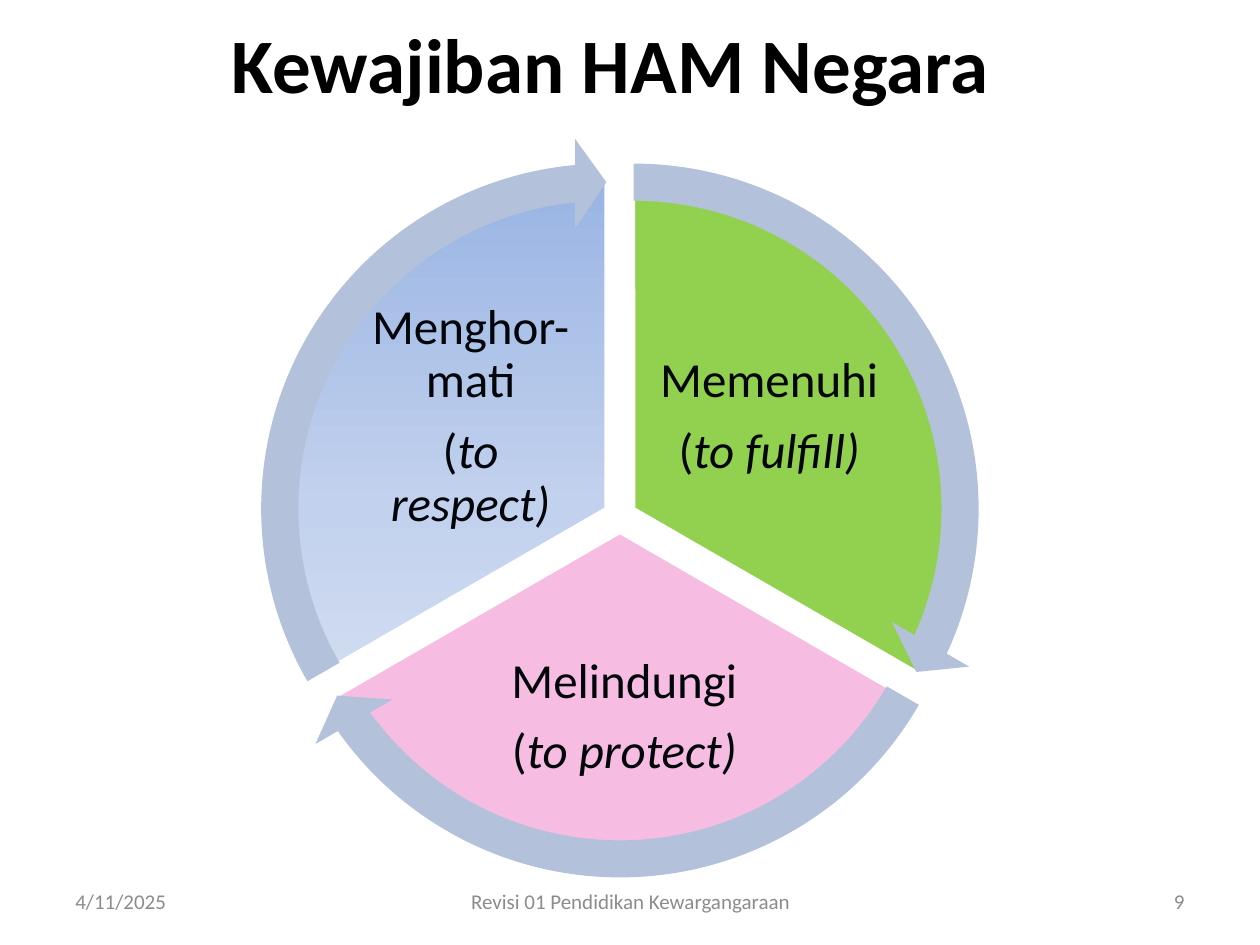
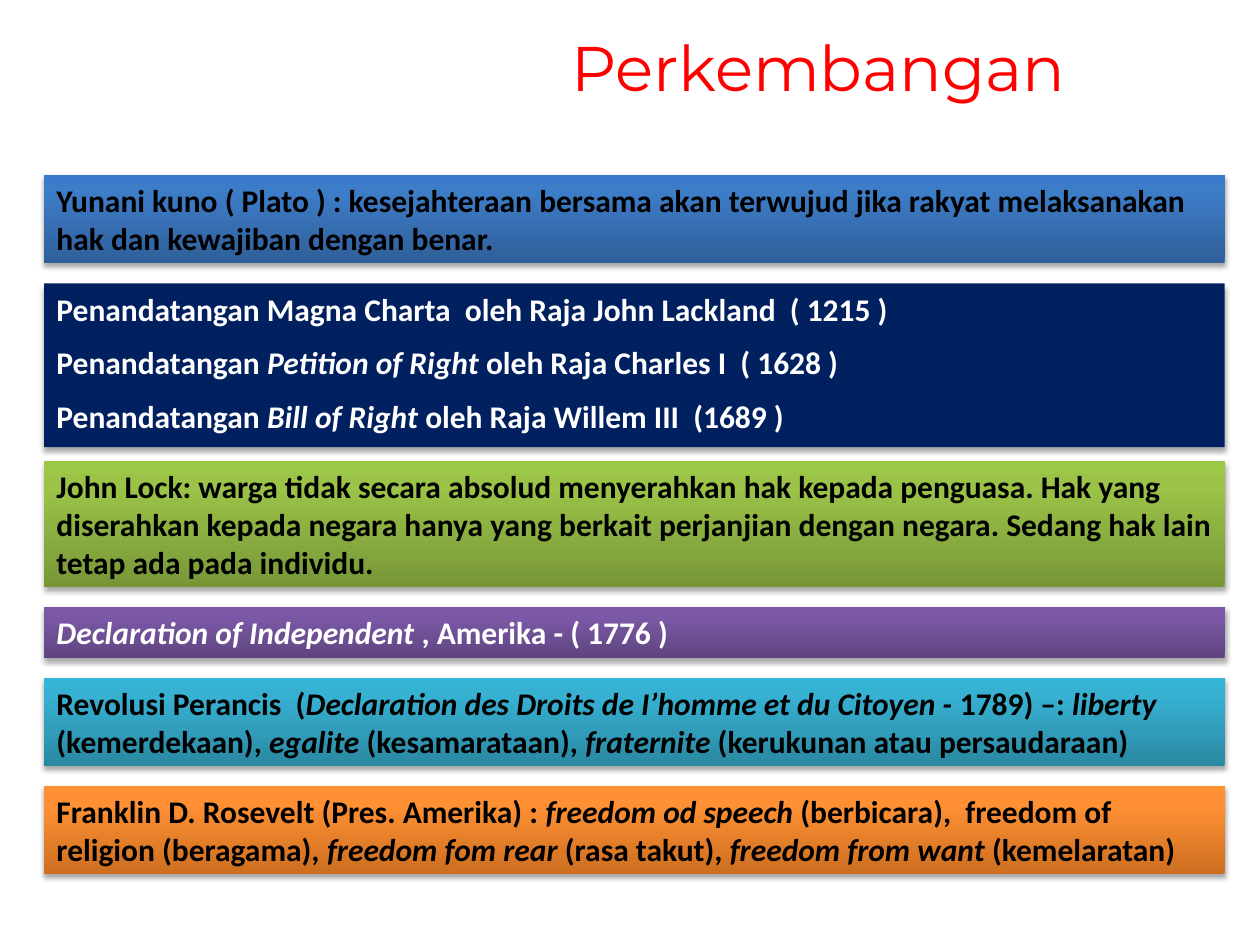
import math

from lxml import etree
from pptx import Presentation
from pptx.dml.color import RGBColor
from pptx.enum.shapes import MSO_SHAPE
from pptx.enum.text import MSO_ANCHOR, MSO_AUTO_SIZE, PP_ALIGN
from pptx.oxml.ns import qn
from pptx.util import Inches, Pt

PIE, ARROW, RECTANGLE = MSO_SHAPE.PIE, MSO_SHAPE.CIRCULAR_ARROW, MSO_SHAPE.RECTANGLE
TOP, MIDDLE = MSO_ANCHOR.TOP, MSO_ANCHOR.MIDDLE
LEFT, CENTER, RIGHT = PP_ALIGN.LEFT, PP_ALIGN.CENTER, PP_ALIGN.RIGHT
NO_FIT, GROW = MSO_AUTO_SIZE.NONE, MSO_AUTO_SIZE.SHAPE_TO_FIT_TEXT

COLORS = {
    "black": "000000", "white": "FFFFFF", "red": "FF0000", "footer": "8C8C8C",
    "label": "02050A", "arrow": "B3C1DB", "green": "92D050", "pink": "F6BCE1",
    "navy": "002060",
}
GRADIENTS = {
    "sky": (90, [(0, "9AB5E4"), (50, "C2D1ED"), (100, "E1E8F5")]),
    "blue": (270, [(0, "2F5F99"), (80, "3D7CC7"), (100, "3A7CCB")]),
    "olive": (270, [(0, "779737"), (80, "9BC348"), (100, "9DC746")]),
    "purple": (270, [(0, "5F4480"), (80, "7B58A6"), (100, "7C57A8")]),
    "teal": (270, [(0, "2A88A2"), (80, "37B1D2"), (100, "34B4D6")]),
    "orange": (270, [(0, "CC6E20"), (80, "FF9034"), (100, "FF9136")]),
}
DEGREE = 0.6

FOOTERS = [
    (0.5, 2.33, LEFT, "4/11/2025"),
    (3.42, 3.17, CENTER, "Revisi 01 Pendidikan Kewargangaraan"),
    (7.17, 2.33, RIGHT, "9"),
]
DUTIES = [
    ("green", (5.17, 2.53, 1.87, 1.56), ["Memenuhi", "(*to fulfill)*"]),
    ("pink", (3.55, 5.01, 2.81, 1.37), ["Melindungi", "(*to protect)*"]),
    ("sky", (2.8, 2.53, 1.87, 1.56), ["Menghor- mati", "(*to respect)*"]),
]
MILESTONES = [
    ("blue", "black", 0.7, 0.16, [
        "Yunani kuno ( Plato ) : kesejahteraan bersama akan terwujud jika rakyat "
        "melaksanakan hak dan kewajiban dengan benar."]),
    ("navy", "white", 1.3, 0.11, [
        "Penandatangan Magna Charta  oleh Raja John Lackland  ( 1215 )",
        "Penandatangan *Petition of Right *oleh Raja Charles I  ( 1628 )",
        "Penandatangan *Bill of Right* oleh Raja Willem III  (1689 )"]),
    ("olive", "black", 1.0, 0.16, [
        "John Lock: warga tidak secara absolud menyerahkan hak kepada penguasa. "
        "Hak yang diserahkan kepada negara hanya yang berkait perjanjian dengan "
        "negara. Sedang hak lain tetap ada pada individu."]),
    ("purple", "white", 0.4, 0.16, [
        "*Declaration of Independent* , Amerika - ( 1776 )"]),
    ("teal", "black", 0.7, 0.16, [
        "Revolusi Perancis  (*Declaration des Droits de I’homme et du Citoyen - *"
        "1789) –: *liberty *(kemerdekaan), *egalite* (kesamarataan), "
        "*fraternite* (kerukunan atau persaudaraan)"]),
    ("orange", "black", 0.7, 0.16, [
        "Franklin D. Rosevelt (Pres. Amerika) : *freedom od speech* (berbicara),  "
        "freedom of religion (beragama), *freedom fom rear* (rasa takut), "
        "*freedom from want* (kemelaratan)"]),
]


class Deck:
    def __init__(self):
        self.presentation = Presentation()
        self.presentation.slide_width = Inches(10)
        self.presentation.slide_height = Inches(7.5)
        self.slide = None

    def add_slide(self, title, box, size, color, font="Calibri", bold=False, wrap=True):
        self.slide = self.presentation.slides.add_slide(self.presentation.slide_layouts[5])
        shape = self.slide.shapes.title
        shape.left, shape.top, shape.width, shape.height = map(Inches, box)
        self.fill_text(shape.text_frame, [title], size, color, CENTER, font, bold, wrap=wrap)

    def fill_text(self, frame, lines, size, color, align=LEFT, font="Calibri", bold=False,
                  anchor=TOP, wrap=True, fit=NO_FIT, before=0, after=0, spacing=1.0):
        frame.word_wrap = wrap
        frame.auto_size = fit
        frame.vertical_anchor = anchor
        for index, line in enumerate(lines):
            paragraph = frame.add_paragraph() if index else frame.paragraphs[0]
            paragraph.alignment = align
            paragraph.line_spacing = spacing
            paragraph.space_before = Pt(before if index else 0)
            paragraph.space_after = Pt(after)
            paragraph.font.name = font
            paragraph.font.size = Pt(size)
            paragraph.font.bold = bold
            paragraph.font.color.rgb = RGBColor.from_string(COLORS[color])
            for position, piece in enumerate(line.split("*")):
                if piece:
                    run = paragraph.add_run()
                    run.text = piece
                    if position % 2:
                        run.font.italic = True

    def text(self, box, lines, size, color, align, inset=None, **style):
        frame = self.slide.shapes.add_textbox(*map(Inches, box)).text_frame
        if inset is not None:
            frame.margin_left = frame.margin_right = Inches(inset)
            frame.margin_top = frame.margin_bottom = Inches(inset)
        self.fill_text(frame, lines, size, color, align, anchor=MIDDLE, **style)

    def footer(self):
        for left, width, align, text in FOOTERS:
            self.text((left, 6.95, width, 0.4), [text], 12, "footer", align)

    def shape(self, kind, box, fill, line=None, adjustments=()):
        shape = self.slide.shapes.add_shape(kind, *map(Inches, box))
        shape.shadow.inherit = False
        for index, value in enumerate(adjustments):
            shape.adjustments[index] = value
        if fill in GRADIENTS:
            self.gradient(shape, *GRADIENTS[fill])
        else:
            shape.fill.solid()
            shape.fill.fore_color.rgb = RGBColor.from_string(COLORS[fill])
        if line:
            shape.line.color.rgb = RGBColor.from_string(COLORS[line])
            shape.line.width = Pt(2)
        else:
            shape.line.fill.background()
        return shape

    def gradient(self, shape, angle, stops):
        shape.fill.gradient()
        gradient = shape._element.spPr.find(qn("a:gradFill"))
        stop_list = gradient.find(qn("a:gsLst"))
        for stop in list(stop_list):
            stop_list.remove(stop)
        for position, color in stops:
            stop = etree.SubElement(stop_list, qn("a:gs"), pos=str(position * 1000))
            etree.SubElement(stop, qn("a:srgbClr"), val=color)
        gradient.find(qn("a:lin")).set("ang", str(angle * 60000))

    def shadow(self, shape):
        effects = shape._element.spPr.find(qn("a:effectLst"))
        outer = etree.SubElement(effects, qn("a:outerShdw"), blurRad=str(Pt(3.1)),
                                 dist=str(Pt(1.8)), dir="5400000", rotWithShape="0")
        color = etree.SubElement(outer, qn("a:srgbClr"), val=COLORS["black"])
        etree.SubElement(color, qn("a:alpha"), val="35000")

    def circle_box(self, middle_angle, diameter):
        center_x = 4.92 + 0.125 * math.cos(math.radians(middle_angle))
        center_y = 4.1 + 0.125 * math.sin(math.radians(middle_angle))
        return center_x - diameter / 2, center_y - diameter / 2, diameter, diameter

    def cycle(self, duties):
        sweep = 360 / len(duties)
        starts = [(270 + index * sweep) % 360 for index in range(len(duties))]
        for start, (fill, label_box, lines) in zip(starts, duties):
            end = (start + sweep) % 360
            self.shape(PIE, self.circle_box(start + sweep / 2, 5.24), fill, "white",
                       (start * DEGREE, end * DEGREE))
            self.text(label_box, lines, 28, "label", CENTER, inset=0.04,
                      after=10, spacing=0.9)
        head = 5.46 * DEGREE
        for start in starts:
            end = (start + sweep) % 360
            self.shape(ARROW, self.circle_box(start + sweep / 2, 5.89), "arrow",
                       adjustments=(0.05, head, end * DEGREE - head, start * DEGREE, 0.06))

    def milestones(self, milestones):
        top = 1.39
        for fill, color, height, gap, lines in milestones:
            shape = self.shape(RECTANGLE, (0.35, top, 9.37, height), fill)
            self.shadow(shape)
            self.fill_text(shape.text_frame, lines, 18, color, bold=True, fit=GROW, before=9)
            top += height + gap


def main():
    deck = Deck()
    deck.add_slide("Kewajiban HAM Negara", (0, 0.08, 9.69, 0.58), 44, "black", bold=True)
    deck.footer()
    deck.cycle(DUTIES)
    deck.add_slide("Perkembangan", (3.58, 0.18, 5.83, 0.71), 36, "red",
                   font="Montserrat", wrap=False)
    deck.milestones(MILESTONES)
    deck.presentation.save("out.pptx")


if __name__ == "__main__":
    main()
